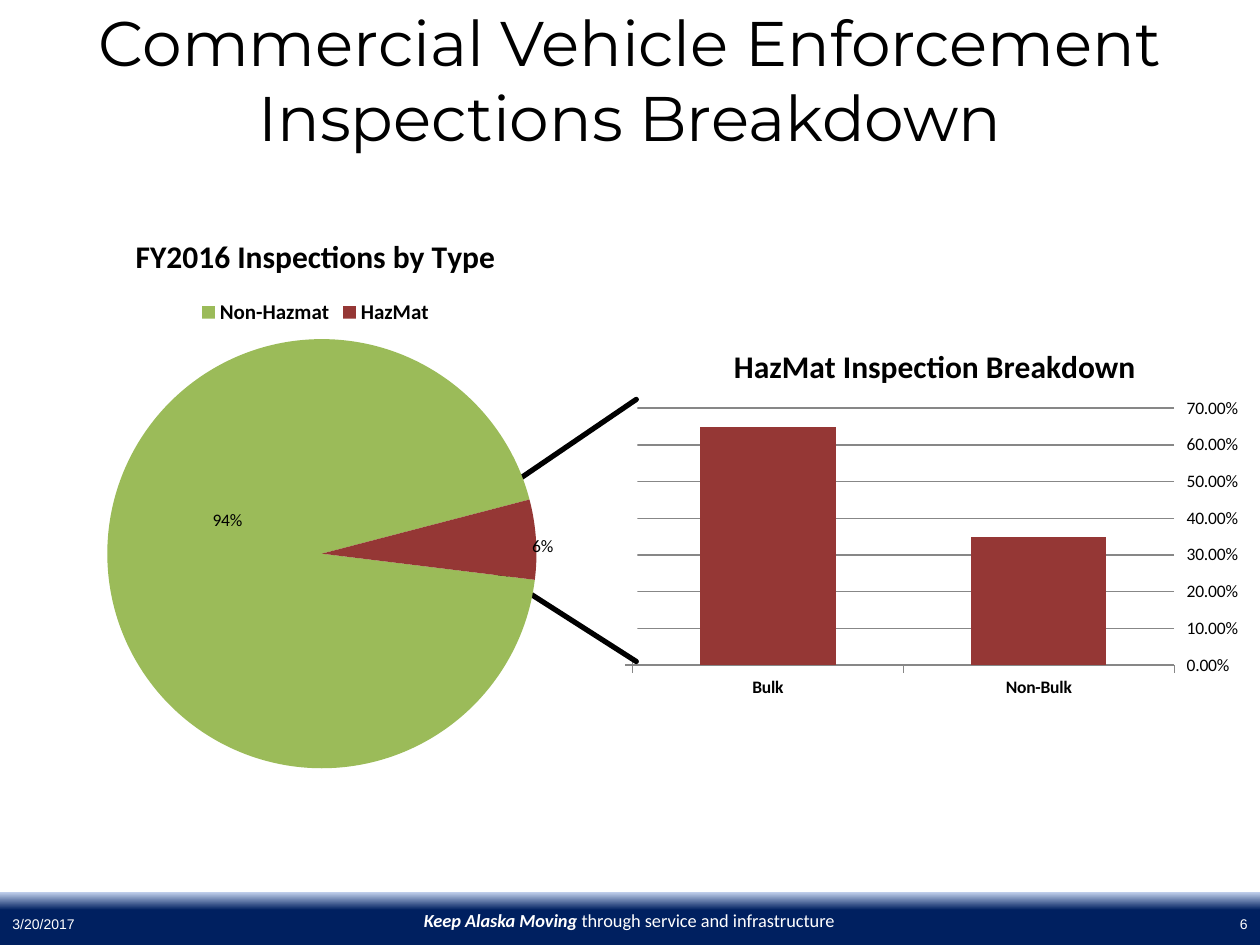
from pptx import Presentation
from pptx.chart.data import CategoryChartData
from pptx.dml.color import RGBColor
from pptx.enum.chart import XL_CHART_TYPE, XL_LEGEND_POSITION, XL_TICK_LABEL_POSITION, XL_TICK_MARK
from pptx.enum.shapes import MSO_CONNECTOR, MSO_SHAPE
from pptx.enum.text import MSO_ANCHOR, PP_ALIGN
from pptx.oxml import parse_xml
from pptx.oxml.ns import nsdecls, qn
from pptx.util import Inches, Pt

COLUMN, PIE = XL_CHART_TYPE.COLUMN_CLUSTERED, XL_CHART_TYPE.PIE
LEFT, CENTER, RIGHT = PP_ALIGN.LEFT, PP_ALIGN.CENTER, PP_ALIGN.RIGHT
TOP, MIDDLE = MSO_ANCHOR.TOP, MSO_ANCHOR.MIDDLE
NAVY, PALE_BLUE, WHITE, BLACK = "002060", "C2D1ED", "FFFFFF", "000000"
GREEN, RED, GREY = "9BBB59", "953735", "878787"


def rgb(value):
    return RGBColor.from_string(value)


def set_font(font, name, size, color, bold=False):
    font.name, font.size, font.bold = name, Pt(size), bold
    font.color.rgb = rgb(color)


def add_title(page, text):
    title = page.shapes.title
    title.left, title.top, title.width, title.height = 0, 0, Inches(10), Inches(1.25)
    title.text_frame.text = text
    title.text_frame.vertical_anchor = MIDDLE
    para = title.text_frame.paragraphs[0]
    para.alignment = CENTER
    set_font(para.font, "Montserrat", 36, BLACK)


def add_rectangle(page, left, top, width, height):
    box = page.shapes.add_shape(MSO_SHAPE.RECTANGLE, Inches(left), Inches(top),
                                Inches(width), Inches(height))
    box.shadow.inherit = False
    box.line.fill.background()
    return box


def add_footer_text(page, left, width, text, align, anchor, font, size):
    box = page.shapes.add_textbox(Inches(left), Inches(7.17), Inches(width), Inches(0.33))
    box.text_frame.word_wrap = True
    box.text_frame.vertical_anchor = anchor
    para = box.text_frame.paragraphs[0]
    para.text, para.alignment = text, align
    set_font(para.font, font, size, WHITE)
    return para


def add_footer(page):
    band = add_rectangle(page, 0, 7.08, 10, 0.42)
    band.fill.gradient()
    band.fill.gradient_angle = 270
    for stop, position, color in zip(band.fill.gradient_stops, (0, 0.34), (PALE_BLUE, NAVY)):
        stop.position, stop.color.rgb = position, rgb(color)

    motto = add_footer_text(page, 2.33, 5.33, "Keep Alaska Moving ", CENTER, TOP, "Calibri", 10.5)
    motto.runs[0].font.bold = motto.runs[0].font.italic = True
    motto.add_run().text = "through service and infrastructure"
    add_footer_text(page, 0, 2.33, "3/20/2017", LEFT, MIDDLE, "Arial", 8)
    add_footer_text(page, 7.67, 2.33, "6", RIGHT, MIDDLE, "Arial", 8)


def manual_layout(x, y, width=None, height=None):
    """Inner plot layout if a size is given, else a label offset."""
    parts = f'<c:x val="{x}"/><c:y val="{y}"/>'
    if width:
        parts = ('<c:layoutTarget val="inner"/><c:xMode val="edge"/><c:yMode val="edge"/>'
                 f'{parts}<c:w val="{width}"/><c:h val="{height}"/>')
    return parse_xml(f'<c:layout {nsdecls("c")}><c:manualLayout>{parts}'
                     '</c:manualLayout></c:layout>')


def add_chart(page, kind, place, title, categories, values, plot_layout, number_format):
    data = CategoryChartData(number_format=number_format)
    data.categories = categories
    data.add_series("Series 1", values)
    chart = page.shapes.add_chart(kind, *map(Inches, place), data).chart
    set_font(chart.font, "Calibri", 10, BLACK)
    chart.has_title = True
    chart.chart_title.text_frame.text = title
    set_font(chart.chart_title.text_frame.paragraphs[0].font, "Calibri", 18, BLACK, True)

    plot_area = chart._chartSpace.chart.plotArea
    for layout in plot_area.findall(qn("c:layout")):
        plot_area.remove(layout)
    plot_area.insert(0, manual_layout(*plot_layout))
    # Clear background, so that shapes behind the chart show
    chart._chartSpace.chart.addnext(
        parse_xml(f'<c:spPr {nsdecls("c", "a")}><a:noFill/><a:ln><a:noFill/></a:ln></c:spPr>'))
    return chart


def add_breakdown_chart(page):
    chart = add_chart(page, COLUMN, (4.92, 2.58, 5, 3), "HazMat Inspection Breakdown",
                      ("Bulk", "Non-Bulk"), (0.65, 0.35), (0.02, 0.22, 0.86, 0.68), "0.00%")
    chart.has_legend = False
    plot = chart.plots[0]
    plot.gap_width, plot.vary_by_categories = 100, False
    fill = plot.series[0].format.fill
    fill.solid()
    fill.fore_color.rgb = rgb(RED)

    axis = chart.value_axis
    axis.minimum_scale, axis.maximum_scale, axis.major_unit = 0, 0.7, 0.1
    axis.tick_label_position = XL_TICK_LABEL_POSITION.HIGH
    axis.tick_labels.number_format = "0.00%"
    axis.tick_labels.number_format_is_linked = False
    axis.major_gridlines.format.line.color.rgb = rgb(GREY)
    set_font(chart.category_axis.tick_labels.font, "Calibri", 10, BLACK, True)
    for each in (axis, chart.category_axis):
        each.major_tick_mark = XL_TICK_MARK.OUTSIDE
        each.format.line.color.rgb = rgb(GREY)


def add_type_chart(page):
    chart = add_chart(page, PIE, (0, 1.67, 5.01, 4.58), "FY2016 Inspections by Type",
                      ("Non-Hazmat", "HazMat"), (94, 6), (0.17, 0.22, 0.68, 0.75), "General")
    chart.has_legend = True
    chart.legend.position = XL_LEGEND_POSITION.TOP
    chart.legend.include_in_layout = False
    set_font(chart.legend.font, "Calibri", 12, BLACK, True)

    plot = chart.plots[0]
    plot.vary_by_categories = True
    plot._element.append(parse_xml(f'<c:firstSliceAng {nsdecls("c")} val="97"/>'))
    series = plot.series[0]
    for index, color in enumerate((GREEN, RED)):
        fill = series.points[index].format.fill
        fill.solid()
        fill.fore_color.rgb = rgb(color)

    # Percent labels, each moved from the middle of its slice
    labels = series.data_labels
    labels.show_percentage, labels.show_value = True, False
    shows = "".join(f'<c:show{name} val="{int(name == "Percent")}"/>' for name in
                    ("LegendKey", "Val", "CatName", "SerName", "Percent", "BubbleSize"))
    for index, offset in enumerate(((0.02, -0.07), (0.18, 0))):
        label = parse_xml(f'<c:dLbl {nsdecls("c")}><c:idx val="{index}"/>'
                          f'<c:dLblPos val="ctr"/>{shows}</c:dLbl>')
        label.insert(1, manual_layout(*offset))
        labels._element.insert(index, label)


def add_callout_line(page, start, end):
    line = page.shapes.add_connector(MSO_CONNECTOR.STRAIGHT, *map(Inches, start + end))
    line.line.color.rgb = rgb(BLACK)
    line.line.width = Pt(3)
    properties = line._element.spPr
    properties.find(qn("a:ln")).set("cap", "rnd")
    properties.append(parse_xml(f'<a:effectLst {nsdecls("a")}/>'))


def main():
    deck = Presentation()
    deck.slide_width, deck.slide_height = Inches(10), Inches(7.5)
    page = deck.slides.add_slide(deck.slide_layouts[5])

    add_footer(page)
    add_title(page, "Commercial Vehicle Enforcement Inspections Breakdown")

    # Column chart, with its left axis line masked
    add_breakdown_chart(page)
    mask = add_rectangle(page, 4.93, 3.17, 0.13, 2.08)
    mask.fill.solid()
    mask.fill.fore_color.rgb = rgb(WHITE)

    # Lines from the HazMat slice to the column chart
    add_callout_line(page, (5.05, 5.25), (3.75, 4.42))
    add_callout_line(page, (3.83, 4), (5.05, 3.17))
    add_type_chart(page)

    deck.save("out.pptx")


if __name__ == "__main__":
    main()
